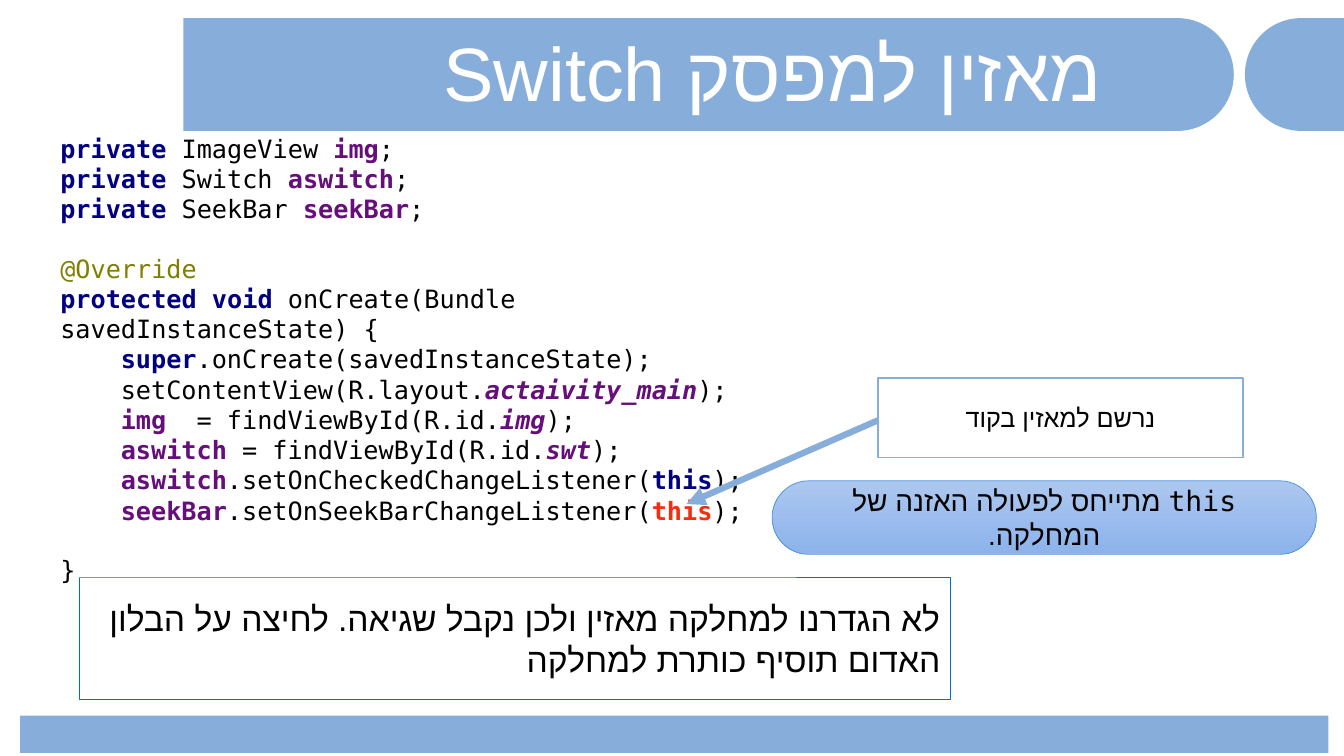
from math import cos, pi, sin

from lxml import etree
from pptx import Presentation
from pptx.dml.color import RGBColor
from pptx.enum.shapes import MSO_CONNECTOR, MSO_SHAPE
from pptx.enum.text import MSO_ANCHOR, PP_ALIGN
from pptx.oxml.ns import qn
from pptx.util import Inches, Pt

RECT, PILL = MSO_SHAPE.RECTANGLE, MSO_SHAPE.ROUNDED_RECTANGLE
STRAIGHT = MSO_CONNECTOR.STRAIGHT
LEFT, CENTER, RIGHT = PP_ALIGN.LEFT, PP_ALIGN.CENTER, PP_ALIGN.RIGHT
MIDDLE = MSO_ANCHOR.MIDDLE

BLUE, WHITE, BLACK = "87ADDB", "FFFFFF", "000000"
SANS, MONO = "Arial", "DejaVu Sans Mono"
TOKENS = {
    "plain": {"color": BLACK},
    "key": {"color": "000080", "bold": True},
    "field": {"color": "660E7A", "bold": True},
    "id": {"color": "660E7A", "bold": True, "italic": True},
    "note": {"color": "808000"},
    "alert": {"color": "F3300E", "bold": True},
}
INDENT = {"left": Inches(0.6)}
GAP = {"space_before": Pt(21)}
CODE = [
    ({}, [("key", "private "), ("plain", "ImageView "), ("field", "img"), ("plain", ";")]),
    ({}, [("key", "private "), ("plain", "Switch "), ("field", "aswitch"), ("plain", ";")]),
    ({}, [("key", "private "), ("plain", "SeekBar "), ("field", "seekBar"), ("plain", ";")]),
    (GAP, [("note", "@Override")]),
    ({}, [("key", "protected void "), ("plain", "onCreate(Bundle savedInstanceState) {")]),
    (INDENT, [("key", "super"), ("plain", ".onCreate(savedInstanceState);")]),
    (INDENT, [("plain", "setContentView(R.layout."), ("id", "actaivity_main"), ("plain", ");")]),
    (INDENT, [("field", "img  "), ("plain", "= findViewById(R.id."), ("id", "img"), ("plain", ");")]),
    (INDENT, [("field", "aswitch "), ("plain", "= findViewById(R.id."), ("id", "swt"), ("plain", ");")]),
    (INDENT, [("field", "aswitch"), ("plain", ".setOnCheckedChangeListener("),
              ("key", "this"), ("plain", ");")]),
    (INDENT, [("field", "seekBar"), ("plain", ".setOnSeekBarChangeListener("),
              ("alert", "this"), ("plain", ");")]),
    (GAP, [("plain", "}")]),
]


def rgb(value):
    return RGBColor.from_string(value)


class Deck:
    def __init__(self):
        self.prs = Presentation()
        self.prs.slide_width, self.prs.slide_height = Inches(13.333), Inches(7.5)
        self.s = self.prs.slides.add_slide(self.prs.slide_layouts[6])

    def x(self, percent):
        return round(self.prs.slide_width * percent / 100)

    def y(self, percent):
        return round(self.prs.slide_height * percent / 100)

    def area(self, x, y, w, h):
        return self.x(x), self.y(y), self.x(w), self.y(h)

    def paint(self, sp, fill, line=None, width=1):
        sp.shadow.inherit = False
        if isinstance(fill, tuple):
            sp.fill.gradient()
            sp.fill.gradient_angle = 270
            for stop, color in zip(sp.fill.gradient_stops, fill):
                stop.color.rgb = rgb(color)
        else:
            sp.fill.solid()
            sp.fill.fore_color.rgb = rgb(fill)
        if line:
            sp.line.color.rgb = rgb(line)
            sp.line.width = Pt(width)
        else:
            sp.line.fill.background()
        return sp

    def box(self, area, fill, line=None, width=1, kind=RECT):
        sp = self.s.shapes.add_shape(kind, *self.area(*area))
        if kind == PILL:
            sp.adjustments[0] = 0.5
        return self.paint(sp, fill, line, width)

    def half_capsule(self, area, fill, round_right):
        x, y, w, h = self.area(*area)
        r, steps = h / 2, 48
        side = 1 if round_right else -1
        center, flat = (x + w - r, x) if round_right else (x + r, x + w)
        turns = [pi * i / steps - pi / 2 for i in range(steps + 1)]
        arc = [(round(center + side * r * cos(a)), round(y + r + r * sin(a))) for a in turns]
        builder = self.s.shapes.build_freeform(flat, y)
        builder.add_line_segments(arc + [(flat, y + h)], close=True)
        return self.paint(builder.convert_to_shape(), fill)

    def arrow(self, start, end, color, width):
        ends = [self.x(start[0]), self.y(start[1]), self.x(end[0]), self.y(end[1])]
        sp = self.s.shapes.add_connector(STRAIGHT, *ends)
        sp.line.color.rgb = rgb(color)
        sp.line.width = Pt(width)
        etree.SubElement(sp.line._get_or_add_ln(), qn("a:tailEnd"), type="triangle")
        etree.SubElement(sp._element.spPr, qn("a:effectLst"))

    def frame(self, sp):
        tf = sp.text_frame
        tf.word_wrap, tf.vertical_anchor = True, MIDDLE
        return tf

    def run(self, p, text, size, font, color=BLACK, bold=False, italic=False):
        r = p.add_run()
        r.text = text
        style = {"size": Pt(size), "name": font, "bold": bold, "italic": italic}
        for name, value in style.items():
            setattr(r.font, name, value)
        r.font.color.rgb = rgb(color)
        return r

    def hebrew(self, sp, text, size, align=CENTER, font=SANS, color=BLACK, **spacing):
        p = self.frame(sp).paragraphs[0]
        for name, value in {"alignment": align, **spacing}.items():
            setattr(p, name, value)
        p._p.get_or_add_pPr().set("rtl", "1")
        r = self.run(p, text, size, font, color)
        etree.SubElement(r._r.get_or_add_rPr(), qn("a:cs"), typeface=SANS)

    def code(self, sp, lines, size):
        tf = self.frame(sp)
        for i, (layout, tokens) in enumerate(lines):
            p = tf.add_paragraph() if i else tf.paragraphs[0]
            p.alignment = LEFT
            if "space_before" in layout:
                p.space_before = layout["space_before"]
            p._p.get_or_add_pPr().set("marL", str(layout.get("left", 0)))
            for token, text in tokens:
                self.run(p, text, size, MONO, **TOKENS[token])

    def title(self, area, text):
        sp = self.s.shapes.add_textbox(*self.area(*area))
        self.hebrew(sp, text, 54, color=WHITE, line_spacing=0.9, space_before=Pt(10))


def main():
    d = Deck()
    d.half_capsule((0, 2.4, 91.8, 14.93), BLUE, True)
    d.box((0, 2.4, 13.65, 14.93), WHITE)
    d.half_capsule((92.63, 2.4, 7.37, 14.93), BLUE, False)
    d.box((1.5, 94.67, 97.35, 4.93), BLUE)
    d.title((17.4, 4.93, 80.18, 10.53), "מאזין למפסק Switch")

    warning = d.box((5.93, 76.4, 64.8, 16.13), WHITE, "0070C0")
    d.hebrew(warning, "לא הגדרנו למחלקה מאזין ולכן נקבל שגיאה. "
             "לחיצה על הבלון האדום תוסיף כותרת למחלקה", 24, RIGHT)
    d.code(d.box((3.75, 18.53, 55.5, 57.87), WHITE), CODE, 18)

    callout = d.box((65.33, 50, 27.15, 10.53), WHITE, BLUE)
    d.hebrew(callout, "נרשם למאזין בקוד", 18)
    d.arrow((65.33, 55.6), (51.08, 66.67), BLUE, 4.5)

    pill = d.box((57.45, 63.6, 40.5, 9.73), ("ACC7EF", "8CB3EC"), "4C93DF", 0.5, PILL)
    d.hebrew(pill, "this מתייחס לפעולה האזנה של המחלקה.", 20, font=MONO)
    d.prs.save("out.pptx")


if __name__ == "__main__":
    main()
